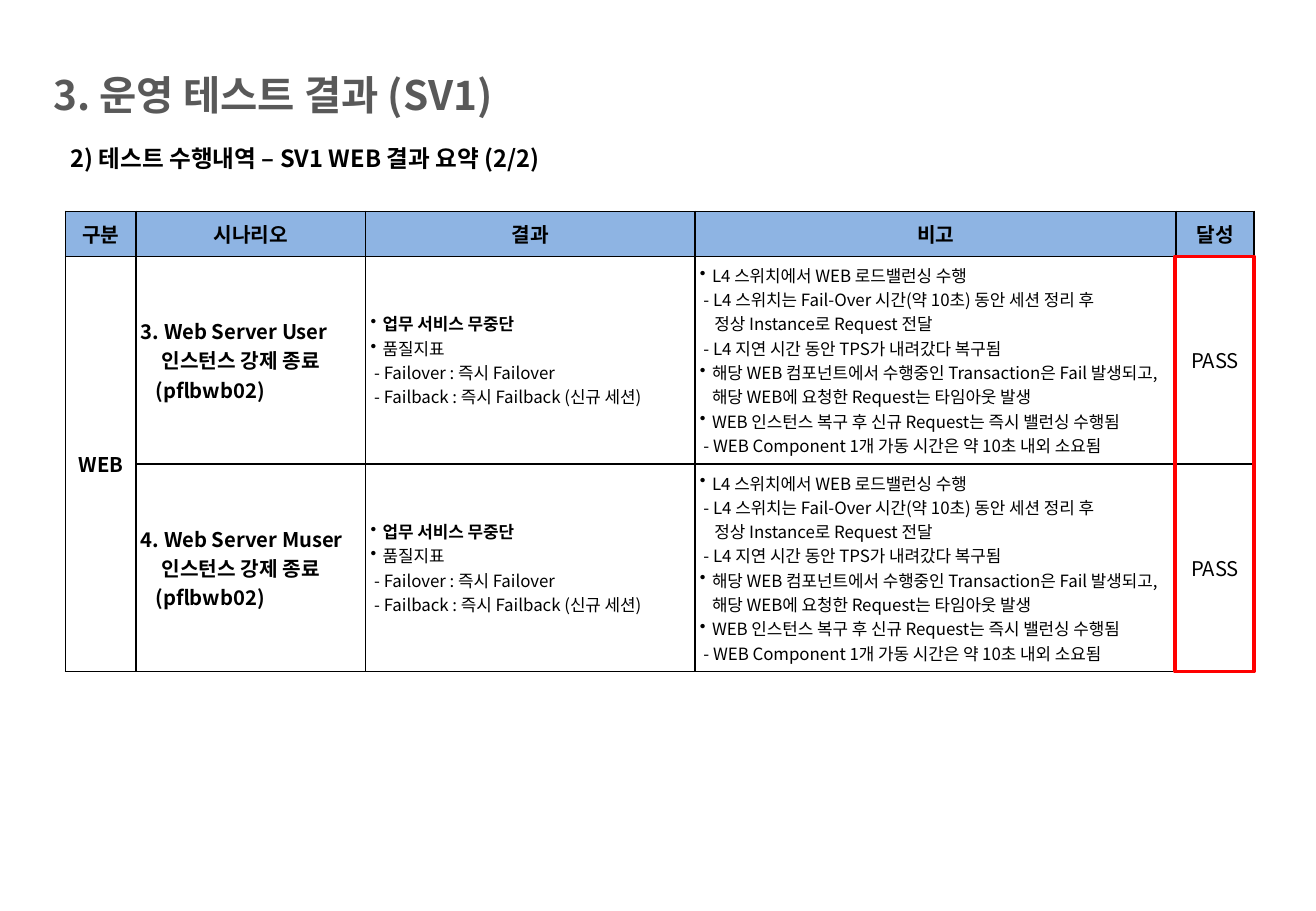
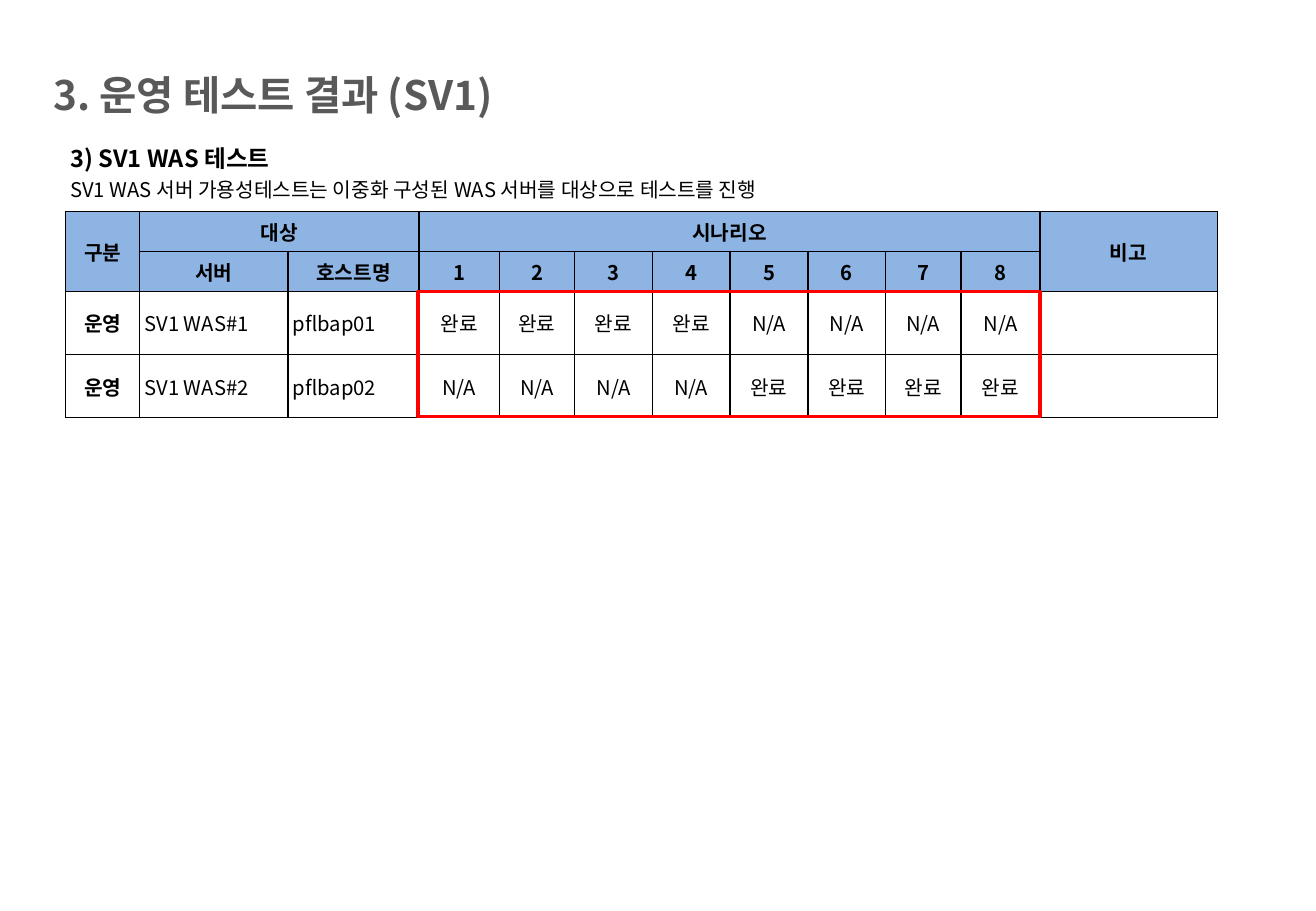
from dataclasses import dataclass

from lxml.etree import SubElement
from pptx import Presentation
from pptx.dml.color import RGBColor
from pptx.enum.shapes import MSO_SHAPE as Preset
from pptx.enum.text import MSO_ANCHOR as Anchor, PP_ALIGN as Align
from pptx.oxml.ns import qn
from pptx.slide import Slide
from pptx.table import _Cell as TableCell
from pptx.util import Emu, Pt

# Shared look
FONT = "Noto Sans CJK KR"
BLACK = RGBColor(0x00, 0x00, 0x00)
WHITE = RGBColor(0xFF, 0xFF, 0xFF)
GRAY = RGBColor(0x59, 0x59, 0x59)
HEADER_BLUE = RGBColor(0x8E, 0xB4, 0xE3)
RED = RGBColor(0xFF, 0x00, 0x00)
EMU_PER_PX = 9144  # 100 px to the inch
TABLE_LEFT, TABLE_TOP = 54, 174
TITLE = "3. 운영 테스트 결과 (SV1)"


@dataclass(frozen=True)
class Line:
    """One paragraph; a newline in the text is a line break."""
    text: str
    size: int = 12
    bold: bool = False
    color: RGBColor = BLACK
    align: Align = Align.LEFT
    indent: int = 0
    first: int = 0
    bullet: bool = False
    spacing: float | None = None


@dataclass(frozen=True)
class Cell:
    lines: tuple[Line, ...] = ()
    header: bool = False


@dataclass(frozen=True)
class Grid:
    columns: list[int]
    rows: list[int]
    cells: list[list[Cell]]
    merges: list[tuple[int, int, int, int]]


@dataclass(frozen=True)
class Box:
    left: int
    top: int
    width: int
    height: int


def px(value: int) -> Emu:
    return Emu(value * EMU_PER_PX)


# Text
def write_line(paragraph, line: Line) -> None:
    paragraph.alignment = line.align
    if line.spacing:
        paragraph.line_spacing = line.spacing
    properties = paragraph._p.get_or_add_pPr()
    properties.set("marL", str(px(line.indent)))
    properties.set("indent", str(px(line.first)))
    if line.bullet:
        SubElement(properties, qn("a:buChar"), char="•")
    for number, part in enumerate(line.text.split("\n")):
        if number:
            paragraph.add_line_break()
        run = paragraph.add_run()
        run.text = part
        font = run.font
        font.name, font.size, font.bold = FONT, Pt(line.size), line.bold
        font.color.rgb = line.color
        SubElement(run._r.get_or_add_rPr(), qn("a:ea"), typeface=FONT)


def write_lines(frame, lines: tuple[Line, ...]) -> None:
    frame.word_wrap = True
    for number, line in enumerate(lines):
        write_line(frame.add_paragraph() if number else frame.paragraphs[0], line)


def add_text(slide: Slide, box: Box, *lines: Line) -> None:
    shape = slide.shapes.add_textbox(px(box.left), px(box.top), px(box.width), px(box.height))
    write_lines(shape.text_frame, lines)


# Table
def add_borders(cell: TableCell) -> None:
    properties = cell._tc.get_or_add_tcPr()
    for side in ("L", "R", "T", "B"):
        border = SubElement(properties, qn(f"a:ln{side}"), w=str(Pt(1)))
        fill = SubElement(border, qn("a:solidFill"))
        SubElement(fill, qn("a:srgbClr"), val=str(BLACK))


def fill_cell(cell: TableCell, content: Cell) -> None:
    add_borders(cell)
    cell.fill.solid()
    cell.fill.fore_color.rgb = HEADER_BLUE if content.header else WHITE
    cell.vertical_anchor = Anchor.MIDDLE
    cell.margin_left = cell.margin_right = px(10 if content.header else 4)
    cell.margin_top = cell.margin_bottom = px(4)
    if content.lines:
        write_lines(cell.text_frame, content.lines)
    else:
        SubElement(cell.text_frame.paragraphs[0]._p, qn("a:endParaRPr"), sz="1200")


def add_grid(slide: Slide, grid: Grid) -> None:
    table = slide.shapes.add_table(
        len(grid.rows), len(grid.columns), px(TABLE_LEFT), px(TABLE_TOP),
        px(sum(grid.columns)), px(sum(grid.rows))).table
    table.first_row = table.horz_banding = False
    for column, width in zip(table.columns, grid.columns):
        column.width = px(width)
    for row, height in zip(table.rows, grid.rows):
        row.height = px(height)
    for top, left, bottom, right in grid.merges:
        table.cell(top, left).merge(table.cell(bottom, right))
    for row, contents in enumerate(grid.cells):
        for column, content in enumerate(contents):
            fill_cell(table.cell(row, column), content)


def add_highlight(slide: Slide, box: Box) -> None:
    shape = slide.shapes.add_shape(
        Preset.RECTANGLE, px(box.left), px(box.top), px(box.width), px(box.height))
    shape.shadow.inherit = False
    shape.fill.background()
    shape.line.color.rgb = RED
    shape.line.width = Pt(2)


# Kinds of cell and line
def header(text: str = "") -> Cell:
    return Cell((Line(text, bold=True, align=Align.CENTER),) if text else (), header=True)


def centered(text: str, bold: bool = False) -> Cell:
    return Cell((Line(text, bold=bold, align=Align.CENTER),))


def bullet(text: str, bold: bool = False) -> Line:
    return Line(text, size=10, bold=bold, indent=10, first=-10, bullet=True)


def dash(text: str) -> Line:
    return Line(f"- {text}", size=10, indent=12, first=-9)


def subtitle(text: str) -> Line:
    return Line(text, size=14, bold=True, spacing=1.2)


def scenario(name: str) -> Cell:
    return Cell((Line(f"{name}\n인스턴스 강제 종료", bold=True, indent=17, first=-17),
                 Line("(pflbwb02)", bold=True, indent=12)))


def add_titled_slide(presentation) -> Slide:
    slide = presentation.slides.add_slide(presentation.slide_layouts[6])
    add_text(slide, Box(34, 53, 806, 58), Line(TITLE, size=24, bold=True, color=GRAY))
    return slide


# Slide contents
RESULT = Cell((
    bullet("업무 서비스 무중단", bold=True),
    bullet("품질지표"),
    dash("Failover : 즉시 Failover"),
    dash("Failback : 즉시 Failback (신규 세션)"),
))
REMARKS = Cell((
    bullet("L4 스위치에서 WEB 로드밸런싱 수행"),
    dash("L4 스위치는 Fail-Over 시간(약 10초) 동안 세션 정리 후\n정상 Instance로 Request 전달"),
    dash("L4 지연 시간 동안 TPS가 내려갔다 복구됨"),
    bullet("해당 WEB 컴포넌트에서 수행중인 Transaction은 Fail 발생되고, "
           "해당 WEB에 요청한 Request는 타임아웃 발생"),
    bullet("WEB 인스턴스 복구 후 신규 Request는 즉시 밸런싱 수행됨"),
    dash("WEB Component 1개 가동 시간은 약 10초 내외 소요됨"),
))


def add_web_summary(presentation) -> None:
    slide = add_titled_slide(presentation)
    names = ["구분", "시나리오", "결과", "비고", "달성"]
    add_grid(slide, Grid(
        columns=[58, 189, 271, 396, 64],
        rows=[37, 171, 171],
        cells=[
            [header(name) for name in names],
            [centered("WEB", bold=True), scenario("3. Web Server User"),
             RESULT, REMARKS, centered("PASS")],
            [Cell(), scenario("4. Web Server Muser"), RESULT, REMARKS, centered("PASS")],
        ],
        merges=[(1, 0, 2, 0)]))
    add_text(slide, Box(48, 109, 1024, 38),
             subtitle("2) 테스트 수행내역 – SV1 WEB 결과 요약 (2/2)"))
    add_highlight(slide, Box(967, 211, 65, 342))


def add_was_test(presentation) -> None:
    slide = add_titled_slide(presentation)
    add_text(slide, Box(48, 109, 1024, 65),
             subtitle("3) SV1 WAS 테스트"),
             Line("SV1 WAS 서버 가용성테스트는 이중화 구성된 WAS 서버를 대상으로 테스트를 진행",
                  spacing=1.2))
    top_names = ["구분", "대상", "", "시나리오", *[""] * 7, "비고"]
    sub_names = ["", "서버", "호스트명", *map(str, range(1, 9)), ""]
    done, skipped = ["완료"] * 4, ["N/A"] * 4
    servers = [("SV1 WAS#1", "pflbap01", done + skipped),
               ("SV1 WAS#2", "pflbap02", skipped + done)]
    add_grid(slide, Grid(
        columns=[61, 122, 108, 66, 62, 64, 64, 64, 64, 62, 65, 146],
        rows=[33, 33, 52, 52],
        cells=[[header(name) for name in names] for names in (top_names, sub_names)] + [
            [centered("운영", bold=True), Cell((Line(server),)), Cell((Line(host),)),
             *map(centered, states), Cell()]
            for server, host, states in servers],
        merges=[(0, 0, 1, 0), (0, 1, 0, 2), (0, 3, 0, 10), (0, 11, 1, 11)]))
    add_highlight(slide, Box(344, 240, 512, 103))


def main() -> None:
    presentation = Presentation()
    presentation.slide_width, presentation.slide_height = px(1083), px(750)
    add_web_summary(presentation)
    add_was_test(presentation)
    presentation.save("out.pptx")


if __name__ == "__main__":
    main()
